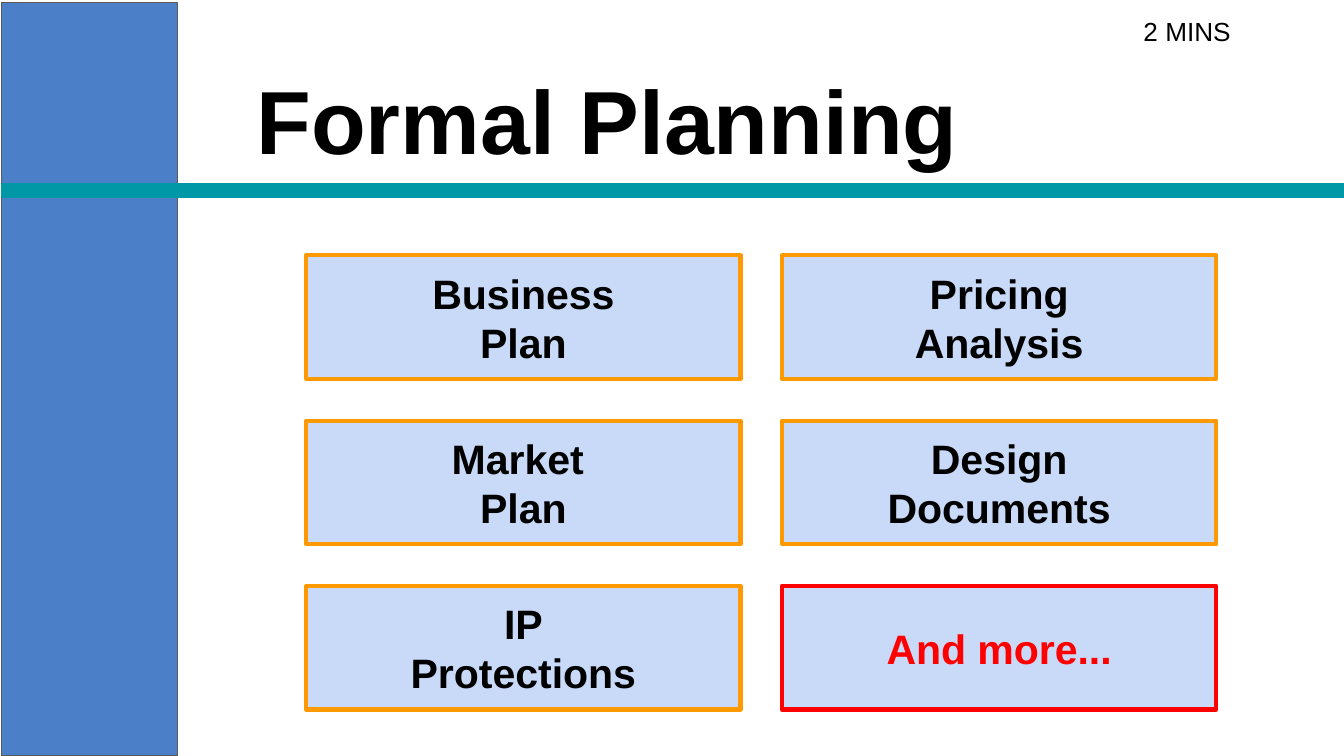
from pptx import Presentation
from pptx.dml.color import RGBColor
from pptx.enum.shapes import MSO_SHAPE
from pptx.enum.text import MSO_ANCHOR, PP_ALIGN
from pptx.util import Inches, Pt

RECT = MSO_SHAPE.RECTANGLE
LEFT, MID = PP_ALIGN.LEFT, PP_ALIGN.CENTER
TOP, CORE = MSO_ANCHOR.TOP, MSO_ANCHOR.MIDDLE
WIDE = 10
HIGH = WIDE * 9 / 16
FONT = "Arial"
HUES = {
    "blue": "4B7FC7",
    "gray": "595959",
    "teal": "0097A7",
    "pale": "C9DAF8",
    "gold": "FF9900",
    "red": "FF0000",
    "ink": "000000",
}
PLANS = [
    ["Business\nPlan", "Pricing\nAnalysis"],
    ["Market \nPlan", "Design\nDocuments"],
    ["IP\nProtections", "And more..."],
]


def hue(name):
    """Return the colour with this name."""
    return RGBColor.from_string(HUES[name])


def place(box):
    """Turn a box in inches into slide lengths."""
    return [Inches(part) for part in box]


def inset(box, x, y, w, h):
    """Return a part of a box, given as shares of that box."""
    left, top, wide, high = box
    return left + x * wide, top + y * high, w * wide, h * high


def write(shape, text, size=22, color="ink", bold=False, align=LEFT, anchor=TOP):
    """Fill a shape with text, one paragraph a line."""
    frame = shape.text_frame
    frame.word_wrap = True
    frame.vertical_anchor = anchor
    frame.margin_left = frame.margin_right = Inches(0.1)
    frame.margin_top = frame.margin_bottom = Inches(0.1)
    for i, line in enumerate(text.split("\n")):
        para = frame.paragraphs[0] if i == 0 else frame.add_paragraph()
        para.alignment = align
        para.line_spacing = 1.0
        run = para.add_run()
        run.text = line
        run.font.name = FONT
        run.font.size = Pt(size)
        run.font.bold = bold
        run.font.color.rgb = hue(color)


def block(slide, box, fill, edge, width=0.75):
    """Draw a filled rectangle with an outline."""
    shape = slide.shapes.add_shape(RECT, *place(box))
    shape.shadow.inherit = False
    shape.fill.solid()
    shape.fill.fore_color.rgb = hue(fill)
    shape.line.color.rgb = hue(edge)
    shape.line.width = Pt(width)
    return shape


def label(slide, box, text, **style):
    """Add a text box."""
    write(slide.shapes.add_textbox(*place(box)), text, **style)


def header(slide, box):
    """Place the title, the time and the rule below them."""
    label(slide, inset(box, 0.18, 0.26, 0.78, 0.78), "Formal Planning", size=48, bold=True)
    label(slide, inset(box, 0.84, 0.01, 0.15, 0.18), "2 MINS", size=14)
    block(slide, inset(box, 0, 0.93, 1, 0.07), "teal", "teal")


def cards(slide, box, rows, gap=0.31):
    """Lay out the plans in a grid of equal cards."""
    left, top, wide, high = box
    cols = len(rows[0])
    w = (wide - gap * (cols - 1)) / cols
    h = (high - gap * (len(rows) - 1)) / len(rows)
    for r, row in enumerate(rows):
        for c, text in enumerate(row):
            last = text == rows[-1][-1]
            spot = left + c * (w + gap), top + r * (h + gap), w, h
            card = block(slide, spot, "pale", "red" if last else "gold", 2.25)
            write(card, text, color="red" if last else "ink", bold=True,
                  align=MID, anchor=CORE)


def main():
    """Build and save the slide."""
    deck = Presentation()
    deck.slide_width, deck.slide_height = Inches(WIDE), Inches(HIGH)
    slide = deck.slides.add_slide(deck.slide_layouts[6])
    block(slide, (0.01, 0.02, 1.31, HIGH - 0.02), "blue", "gray")
    header(slide, (0.01, 0, WIDE, 1.47))
    cards(slide, (2.28, 1.9, 6.77, 3.38), PLANS)
    deck.save("out.pptx")


if __name__ == "__main__":
    main()
